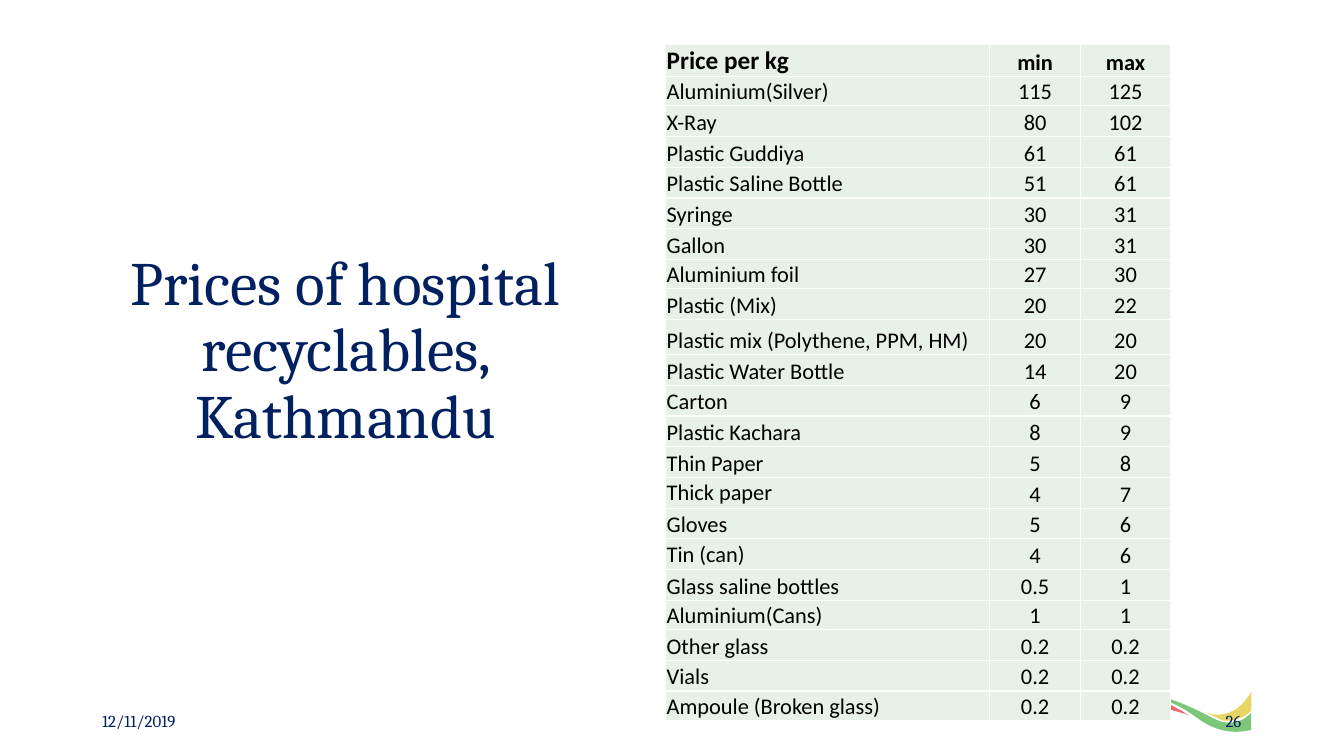
from lxml import etree
from pptx import Presentation
from pptx.dml.color import RGBColor
from pptx.enum.text import MSO_ANCHOR, MSO_AUTO_SIZE, PP_ALIGN
from pptx.oxml.ns import qn
from pptx.util import Pt

PX = 4572  # EMU in one px, 200 px to the inch
LEFT, CENTER, RIGHT = PP_ALIGN.LEFT, PP_ALIGN.CENTER, PP_ALIGN.RIGHT
MIDDLE, BOTTOM = MSO_ANCHOR.MIDDLE, MSO_ANCHOR.BOTTOM
NO_AUTOFIT = MSO_AUTO_SIZE.NONE

NAVY = RGBColor(0x00, 0x20, 0x60)
BLACK = RGBColor(0x00, 0x00, 0x00)
WHITE = RGBColor(0xFF, 0xFF, 0xFF)
PALE_GREEN = RGBColor(0xE8, 0xF1, 0xE8)
GREEN = RGBColor(0x3A, 0xAA, 0x35)
YELLOW = RGBColor(0xDC, 0xC2, 0x17)
RED = RGBColor(0xE8, 0x1C, 0x26)

PRICES = [
    ("Price per kg", "min", "max"),
    ("Aluminium(Silver)", "115", "125"),
    ("X-Ray", "80", "102"),
    ("Plastic Guddiya", "61", "61"),
    ("Plastic Saline Bottle", "51", "61"),
    ("Syringe", "30", "31"),
    ("Gallon", "30", "31"),
    ("Aluminium foil", "27", "30"),
    ("Plastic (Mix)", "20", "22"),
    ("Plastic mix (Polythene, PPM, HM)", "20", "20"),
    ("Plastic Water Bottle", "14", "20"),
    ("Carton", "6", "9"),
    ("Plastic Kachara", "8", "9"),
    ("Thin Paper", "5", "8"),
    ("Thick paper", "4", "7"),
    ("Gloves", "5", "6"),
    ("Tin (can)", "4", "6"),
    ("Glass saline bottles", "0.5", "1"),
    ("Aluminium(Cans)", "1", "1"),
    ("Other glass", "0.2", "0.2"),
    ("Vials", "0.2", "0.2"),
    ("Ampoule (Broken glass)", "0.2", "0.2"),
]
COLUMN_WIDTHS = (643, 180, 179)
ROW_HEIGHT = 61
ODD_ROW_HEIGHTS = {0: 64, 1: 58, 7: 58, 9: 70, 18: 58, 21: 58}
MIDDLE_LABELS = ("Thick paper", "Tin (can)")

# Each ribbon: colour, start, then curves (three points) and lines (one point),
# in ribbon units from the top left corner of the ribbon box.
RIBBONS = [
    (GREEN, (3, 5), [
        [(8, 5), (22, 7), (60, 27)], [(66, 30), (71, 31), (76, 31)],
        [(89, 31), (97, 21), (97, 21)], [(97, 30)], [(97, 38)],
        [(97, 38), (91, 40), (82, 40)], [(73, 40), (59, 38), (43, 26)],
        [(19, 8), (0, 6), (0, 6)], [(0, 6), (0, 5), (3, 5)]]),
    (YELLOW, (97, 0), [
        [(97, 19)], [(97, 19), (88, 29), (74, 29)],
        [(73, 29), (71, 29), (70, 29)], [(66, 28), (53, 21), (52, 21)],
        [(52, 21), (52, 21), (52, 21)],
        [(56, 22), (60, 23), (64, 23)], [(86, 23), (97, 0), (97, 0)]]),
    (RED, (0, 6), [
        [(0, 6), (3, 7), (7, 8)], [(11, 10), (17, 13), (24, 17)],
        [(27, 18), (30, 20), (32, 22)], [(34, 23), (36, 24), (36, 24)],
        [(36, 24), (23, 19), (15, 18)], [(11, 17), (6, 16), (3, 16)],
        [(1, 16), (0, 17), (0, 17)], [(0, 11)]]),
]
RIBBON_UNIT = 2
RIBBON_OPACITY = 66


def add_span(para, text, font_name, size, color, bold=False):
    span = para.add_run()
    span.text = text
    font = span.font
    font.name, font.size, font.bold = font_name, Pt(size), bold
    font.color.rgb = color


def bend_outline(shape, segments):
    """Join the three straight steps of each curve into one cubic curve."""
    steps = iter(list(shape.element.iter(qn("a:lnTo"))))
    for segment in segments:
        straight = [next(steps) for _ in segment]
        if len(segment) == 3:
            curve = etree.Element(qn("a:cubicBezTo"))
            straight[0].addprevious(curve)
            for step in straight:
                curve.append(step[0])
                step.getparent().remove(step)


def add_ribbons(page, left, top):
    group = page.shapes.add_group_shape()
    for color, start, segments in RIBBONS:
        outline = [start, *(point for segment in segments for point in segment)]
        points = [(left + x * RIBBON_UNIT, top + y * RIBBON_UNIT) for x, y in outline]
        builder = group.shapes.build_freeform(*points[0], scale=PX)
        builder.add_line_segments(points[1:], close=True)
        ribbon = builder.convert_to_shape()
        bend_outline(ribbon, segments)
        ribbon.shadow.inherit = False
        ribbon.fill.solid()
        ribbon.fill.fore_color.rgb = color
        ribbon.line.fill.background()
        tint = ribbon.element.spPr.find(qn("a:solidFill"))[0]
        etree.SubElement(tint, qn("a:alpha"), val=str(RIBBON_OPACITY * 1000))


def add_title(page, left, top, width, height):
    title = page.shapes.title
    title.left, title.top, title.width, title.height = (n * PX for n in (left, top, width, height))
    frame = title.text_frame
    frame.word_wrap, frame.auto_size, frame.vertical_anchor = True, NO_AUTOFIT, MIDDLE
    para = frame.paragraphs[0]
    para.alignment, para.line_spacing = CENTER, 0.9
    add_span(para, "Prices of hospital recyclables, Kathmandu", "Cambria", 44, NAVY)


def add_borders(cell):
    """Draw a white 1 pt line on each side; lines go before the cell fill."""
    properties = cell._tc.get_or_add_tcPr()
    for place, side in enumerate(("lnL", "lnR", "lnT", "lnB")):
        line = etree.Element(qn(f"a:{side}"), w=str(Pt(1)))
        fill = etree.SubElement(line, qn("a:solidFill"))
        etree.SubElement(fill, qn("a:srgbClr"), val=str(WHITE))
        properties.insert(place, line)


def fill_cell(cell, text, is_header, is_label):
    cell.margin_left = cell.margin_right = cell.margin_top = 2 * PX
    cell.margin_bottom = 0
    cell.vertical_anchor = MIDDLE if text in MIDDLE_LABELS else BOTTOM
    cell.fill.solid()
    cell.fill.fore_color.rgb = PALE_GREEN
    add_borders(cell)
    para = cell.text_frame.paragraphs[0]
    para.alignment = LEFT if is_label else CENTER
    add_span(para, text, "Calibri", 18 if is_header and is_label else 16, BLACK, is_header)


def add_price_table(page, left, top):
    heights = [ODD_ROW_HEIGHTS.get(index, ROW_HEIGHT) for index in range(len(PRICES))]
    table = page.shapes.add_table(len(PRICES), len(COLUMN_WIDTHS), left * PX, top * PX,
                                  sum(COLUMN_WIDTHS) * PX, sum(heights) * PX).table
    table.first_row = table.horz_banding = False
    for column, width in zip(table.columns, COLUMN_WIDTHS):
        column.width = width * PX
    for row_index, (row, height, texts) in enumerate(zip(table.rows, heights, PRICES)):
        row.height = height * PX
        for column_index, text in enumerate(texts):
            fill_cell(row.cells[column_index], text, row_index == 0, column_index == 0)


def add_footer_text(page, text, alignment, left, top, width, height):
    box = page.shapes.add_textbox(left * PX, top * PX, width * PX, height * PX)
    frame = box.text_frame
    frame.word_wrap, frame.vertical_anchor = True, MIDDLE
    para = frame.paragraphs[0]
    para.alignment = alignment
    add_span(para, text, "Cambria", 12, NAVY)


def main():
    deck = Presentation()
    deck.slide_width, deck.slide_height = 2667 * PX, 1500 * PX
    page = deck.slides.add_slide(deck.slide_layouts.get_by_name("Title Only"))
    add_ribbons(page, 2289, 1372)
    add_title(page, 183, 80, 1006, 1236)
    add_price_table(page, 1321, 88)
    add_footer_text(page, "12/11/2019", LEFT, 183, 1390, 262, 80)
    add_footer_text(page, "26", RIGHT, 2260, 1390, 223, 80)
    deck.save("out.pptx")


if __name__ == "__main__":
    main()
